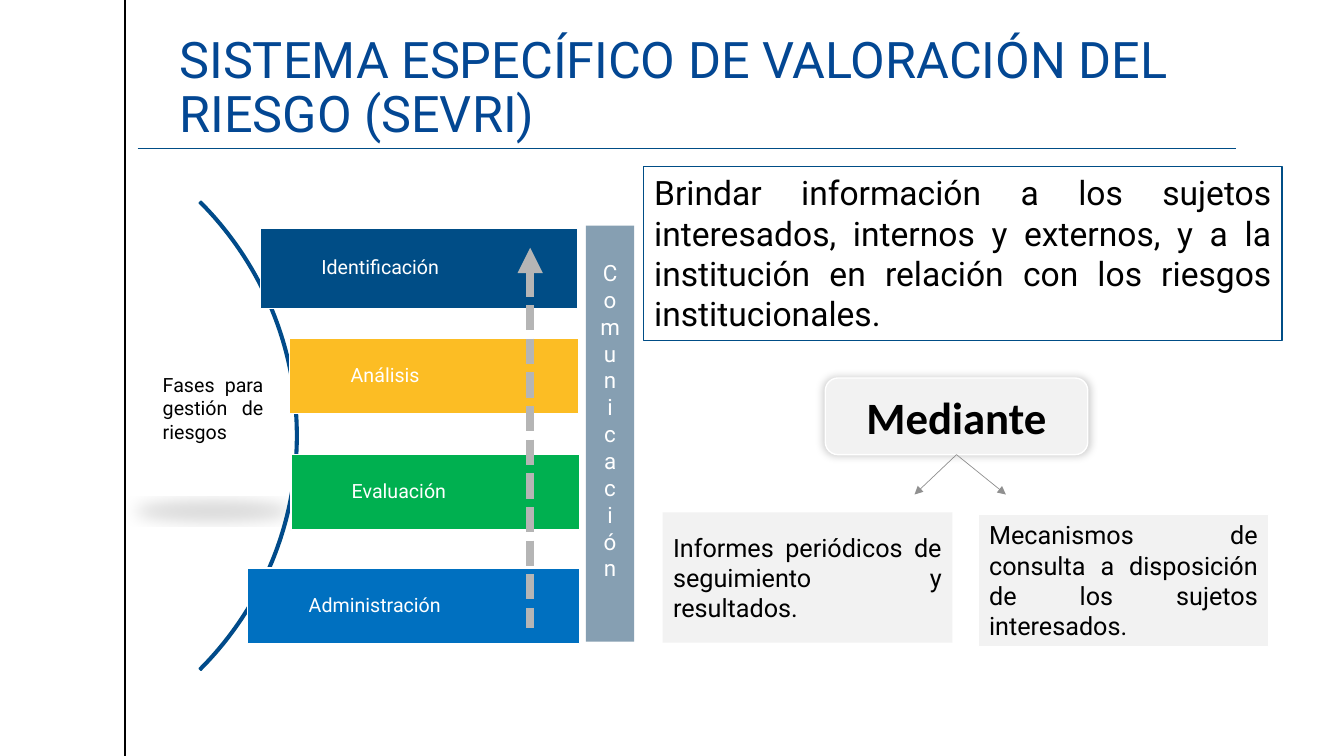
from dataclasses import dataclass

from lxml import etree
from pptx import Presentation
from pptx.dml.color import RGBColor
from pptx.enum.dml import MSO_LINE
from pptx.enum.shapes import MSO_CONNECTOR, MSO_SHAPE
from pptx.enum.text import MSO_ANCHOR, MSO_AUTO_SIZE, PP_ALIGN
from pptx.oxml.ns import qn
from pptx.util import Emu, Pt

EMU_PER_PX = 9525
STRAIGHT = MSO_CONNECTOR.STRAIGHT
DASHED = MSO_LINE.SQUARE_DOT
RECTANGLE, ROUNDED = MSO_SHAPE.RECTANGLE, MSO_SHAPE.ROUNDED_RECTANGLE
OVAL, BLOCK_ARC = MSO_SHAPE.OVAL, MSO_SHAPE.BLOCK_ARC
TOP, MIDDLE, BOTTOM = MSO_ANCHOR.TOP, MSO_ANCHOR.MIDDLE, MSO_ANCHOR.BOTTOM
LEFT, CENTER, JUSTIFY = PP_ALIGN.LEFT, PP_ALIGN.CENTER, PP_ALIGN.JUSTIFY
BOTTOM_SITE = 2

NAVY, TITLE_BLUE, WHITE, BLACK = "004D86", "034793", "FFFFFF", "000000"
PALE, GREY = "F2F2F2", "909090"
DEFAULT_INSETS = (10, 5, 10, 5)


@dataclass(frozen=True)
class Box:
    left: int
    top: int
    width: int
    height: int


@dataclass(frozen=True)
class Phase:
    label: str
    color: str
    box: Box


@dataclass(frozen=True)
class Note:
    text: str
    size: int
    box: Box
    fill: str | None
    line: str | None
    anchor: MSO_ANCHOR


PHASES = [
    Phase("Identificación", NAVY, Box(248, 217, 302, 77)),
    Phase("Análisis", "FCBD24", Box(276, 322, 275, 72)),
    Phase("Evaluación", "00B050", Box(277, 433, 275, 72)),
    Phase("Administración", "0070C0", Box(236, 541, 316, 72)),
]
NOTES = [
    Note("Mecanismos de consulta a disposición de los sujetos interesados.",
         18, Box(932, 490, 276, 126), PALE, WHITE, TOP),
    Note("Brindar información a los sujetos interesados, internos y externos, "
         "y a la institución en relación con los riesgos institucionales.",
         24, Box(613, 159, 608, 165), None, NAVY, TOP),
    Note("Informes periódicos de seguimiento y resultados.",
         18, Box(631, 488, 276, 124), PALE, None, MIDDLE),
]


def px(length: int) -> Emu:
    return Emu(length * EMU_PER_PX)


def rgb(color: str) -> RGBColor:
    return RGBColor.from_string(color)


def place(shape, box: Box) -> None:
    shape.left, shape.top = px(box.left), px(box.top)
    shape.width, shape.height = px(box.width), px(box.height)


def write(shape, text: str, *, size: int, color: str = BLACK, font: str = "Roboto",
          bold: bool = False, align=LEFT, anchor=MIDDLE, spacing: float = 1.0,
          insets: tuple[int, int, int, int] = DEFAULT_INSETS) -> None:
    frame = shape.text_frame
    frame.word_wrap = True
    frame.auto_size = MSO_AUTO_SIZE.NONE
    frame.vertical_anchor = anchor
    (frame.margin_left, frame.margin_top,
     frame.margin_right, frame.margin_bottom) = map(px, insets)
    para = frame.paragraphs[0]
    para.alignment = align
    para.line_spacing = spacing
    span = para.add_run()
    span.text = text
    span.font.name, span.font.size, span.font.bold = font, Pt(size), bold
    span.font.color.rgb = rgb(color)


def add_box(page, kind, box: Box, fill: str | None, line: str | None = None,
            weight: float = 1):
    shape = page.shapes.add_shape(kind, 0, 0, 0, 0)
    place(shape, box)
    shape.shadow.inherit = False
    if fill:
        shape.fill.solid()
        shape.fill.fore_color.rgb = rgb(fill)
    else:
        shape.fill.background()
    if line:
        shape.line.color.rgb = rgb(line)
        shape.line.width = Pt(weight)
    else:
        shape.line.fill.background()
    return shape


def add_shadow(shape, *, alpha: int, blur: float, distance: float, angle: int,
               scale_x: int, scale_y: int, align: str) -> None:
    """Cast a black shadow; alpha and scales are percentages, lengths are points."""
    effects = shape.element.spPr.find(qn("a:effectLst"))
    shadow = etree.SubElement(
        effects, qn("a:outerShdw"), blurRad=str(Pt(blur)), dist=str(Pt(distance)),
        dir=str(angle * 60000), sx=str(scale_x * 1000), sy=str(scale_y * 1000),
        algn=align, rotWithShape="0")
    color = etree.SubElement(shadow, qn("a:srgbClr"), val=BLACK)
    etree.SubElement(color, qn("a:alpha"), val=str(alpha * 1000))


def add_line(page, start: tuple[int, int], end: tuple[int, int], color: str,
             weight: float, *, dash=None, arrow: str | None = None):
    """Draw a line; arrow is headEnd (at the start) or tailEnd (at the end)."""
    line = page.shapes.add_connector(STRAIGHT, *map(px, start + end))
    line.line.color.rgb = rgb(color)
    line.line.width = Pt(weight)
    if dash:
        line.line.dash_style = dash
    properties = line.element.spPr
    if arrow:
        etree.SubElement(properties.find(qn("a:ln")), qn(f"a:{arrow}"), type="triangle")
    etree.SubElement(properties, qn("a:effectLst"))
    return line


def draw_phases(page) -> None:
    arc = add_box(page, BLOCK_ARC, Box(-348, 99, 632, 632), TITLE_BLUE, NAVY)
    for index, value in enumerate((189, 27, 0.004)):
        arc.adjustments[index] = value
    for phase in PHASES:
        bar = add_box(page, RECTANGLE, phase.box, phase.color, WHITE)
        write(bar, phase.label, size=14, color=WHITE, spacing=0.9,
              insets=(58, 4, 4, 4))


def draw_means(page) -> None:
    for note in NOTES:
        panel = add_box(page, RECTANGLE, note.box, note.fill, note.line, 0.75)
        write(panel, note.text, size=note.size, align=JUSTIFY, anchor=note.anchor)
    means = add_box(page, ROUNDED, Box(786, 360, 250, 73), PALE, WHITE)
    add_shadow(means, alpha=20, blur=6, distance=0, angle=315,
               scale_x=101, scale_y=101, align="ctr")
    write(means, "Mediante", size=32, font="Calibri", bold=True, align=CENTER)
    for target in (871, 958):
        branch = add_line(page, (911, 433), (target, 471), GREY, 0.5, arrow="tailEnd")
        branch.begin_connect(means, BOTTOM_SITE)


def main() -> None:
    deck = Presentation()
    deck.slide_width, deck.slide_height = px(1280), px(720)
    page = deck.slides.add_slide(deck.slide_layouts.get_by_name("Title Only"))

    add_line(page, (119, 0), (119, 720), BLACK, 1)
    caption = add_box(page, OVAL, Box(121, 334, 164, 109), WHITE)
    add_shadow(caption, alpha=15, blur=12, distance=25, angle=90,
               scale_x=90, scale_y=-19, align="b")
    write(caption, "Fases para gestión de riesgos", size=14, align=JUSTIFY, anchor=TOP)

    title = page.shapes.title
    place(title, Box(171, 36, 1064, 106))
    write(title, "SISTEMA ESPECÍFICO DE VALORACIÓN DEL RIESGO (SEVRI)", size=36,
          color=TITLE_BLUE, anchor=BOTTOM, spacing=0.9, insets=(0, 5, 0, 5))
    add_line(page, (131, 141), (1177, 141), NAVY, 0.5)

    draw_phases(page)
    draw_means(page)

    add_line(page, (505, 236), (505, 598), "B5B5B5", 6, dash=DASHED, arrow="headEnd")
    column = add_box(page, RECTANGLE, Box(558, 215, 46, 396), "869FB2")
    write(column, "Comunicación ", size=16, color=WHITE, align=CENTER)
    column.element.txBody.bodyPr.set("vert", "wordArtVert")

    deck.save("out.pptx")


if __name__ == "__main__":
    main()
